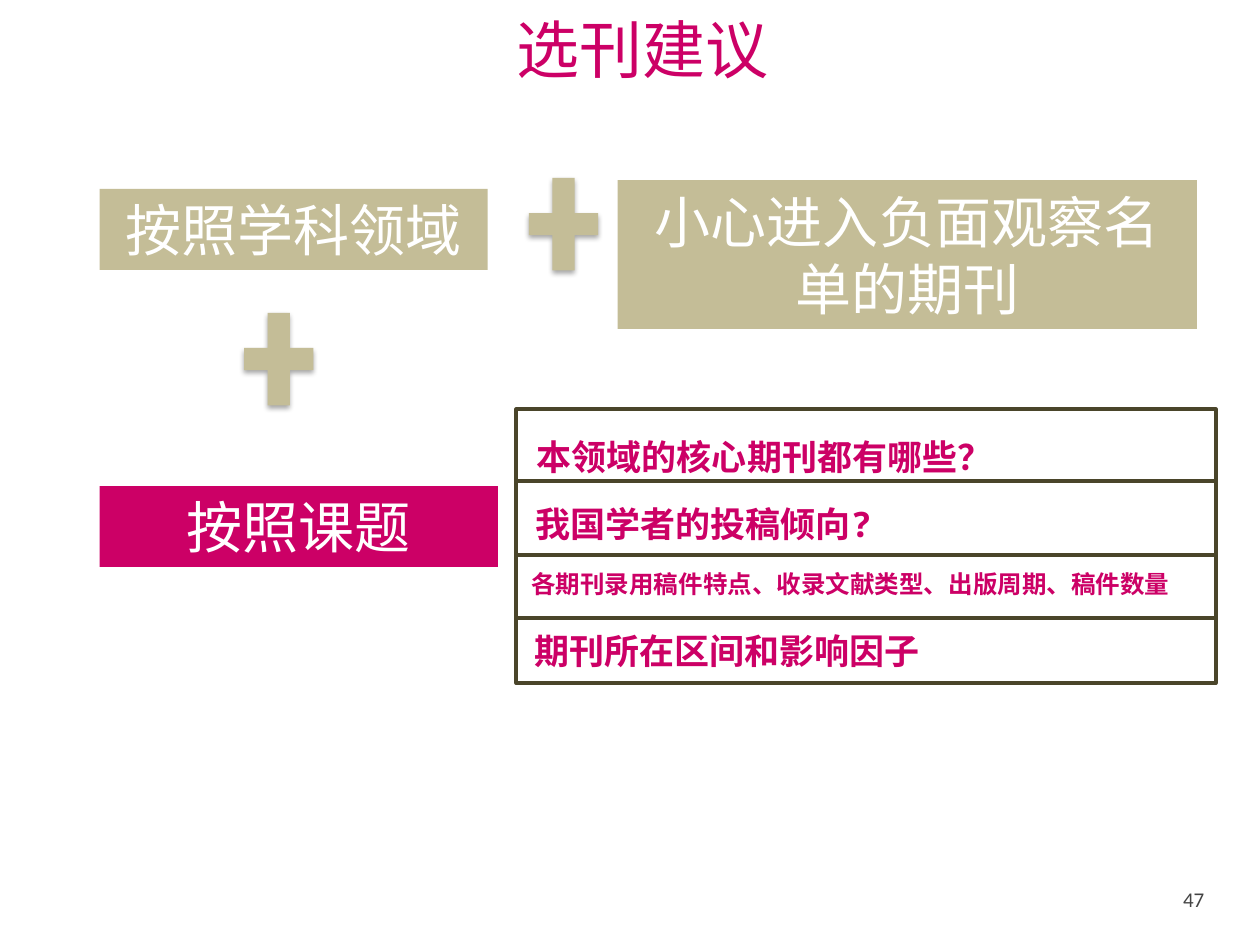
from lxml.etree import SubElement
from pptx import Presentation
from pptx.dml.color import RGBColor
from pptx.enum.shapes import MSO_CONNECTOR as CONN, MSO_SHAPE as SHAPE
from pptx.enum.text import MSO_ANCHOR as ANCHOR, PP_ALIGN as ALIGN
from pptx.oxml.ns import qn
from pptx.util import Cm, Pt

COLORS = {
    "tan": "C4BD97",
    "pink": "CC0066",
    "olive": "4A452A",
    "white": "FFFFFF",
    "gray": "444444",
    "black": "000000",
}


def rgb(name):
    """Return the named palette colour."""
    return RGBColor.from_string(COLORS[name])


def style(p, text, size, font, color, bold=False):
    """Write text into a paragraph and set its font."""
    p.text = text
    p.font.size = Pt(size)
    p.font.name = font
    p.font.bold = bold
    p.font.color.rgb = rgb(color)


def add_text(s, box, text, size, font, color, bold=False, wrap=False, inset=None):
    """Add a one-paragraph text box and return its frame."""
    tf = s.shapes.add_textbox(*map(Cm, box)).text_frame
    tf.word_wrap = wrap
    if inset is not None:
        tf.margin_left = tf.margin_right = Cm(inset[0])
        tf.margin_top = tf.margin_bottom = Cm(inset[1])
    style(tf.paragraphs[0], text, size, font, color, bold)
    return tf


def add_card(s, box, text, fill):
    """Add a filled rectangle with a large centred label."""
    sp = s.shapes.add_shape(SHAPE.RECTANGLE, *map(Cm, box))
    sp.shadow.inherit = False
    sp.fill.solid()
    sp.fill.fore_color.rgb = rgb(fill)
    sp.line.fill.background()
    tf = sp.text_frame
    tf.word_wrap = True
    p = tf.paragraphs[0]
    p.alignment = ALIGN.CENTER
    style(p, text, 32, "Arial", "white")


def add_plus(s, left, top):
    """Add a plus sign with a soft shadow below it."""
    sp = s.shapes.add_shape(SHAPE.MATH_PLUS, Cm(left), Cm(top), Cm(1.9), Cm(2.54))
    sp.fill.solid()
    sp.fill.fore_color.rgb = rgb("tan")
    sp.line.fill.background()
    sp.shadow.inherit = False
    effects = sp._element.spPr.find(qn("a:effectLst"))
    shadow = SubElement(effects, qn("a:outerShdw"), blurRad=str(Pt(3.1)),
                        dist=str(Pt(1.8)), dir="5400000", rotWithShape="0")
    color = SubElement(shadow, qn("a:srgbClr"), val=COLORS["black"])
    SubElement(color, qn("a:alpha"), val="35000")


def add_frame(s, box):
    """Add an unfilled outlined rectangle."""
    sp = s.shapes.add_shape(SHAPE.RECTANGLE, *map(Cm, box))
    sp.shadow.inherit = False
    sp.fill.background()
    sp.line.color.rgb = rgb("olive")
    sp.line.width = Pt(2.25)


def add_divider(s, left, right, y):
    """Add a horizontal line between two question rows."""
    line = s.shapes.add_connector(CONN.STRAIGHT, Cm(left), Cm(y), Cm(right), Cm(y))
    line.line.color.rgb = rgb("olive")
    line.line.width = Pt(2.25)
    SubElement(line._element.spPr, qn("a:effectLst"))


def add_title(s, text):
    """Add the slide title, anchored to the bottom of its box."""
    tf = add_text(s, (10.41, -0.56, 8.61, 2.31), text, 36, "Montserrat", "pink",
                  wrap=True, inset=(0, 0))
    tf.vertical_anchor = ANCHOR.BOTTOM
    tf.paragraphs[0].line_spacing = 0.9


def add_questions(s):
    """Add the framed list of questions about the topic."""
    rows = [
        ((10.57, 8.66, 9.55, 1.12), "本领域的核心期刊都有哪些？", 20),
        ((10.54, 10.01, 7.32, 1.12), "我国学者的投稿倾向?", 20),
        ((10.46, 11.35, 13.49, 0.86), "各期刊录用稿件特点、收录文献类型、出版周期、稿件数量", 14),
        ((10.52, 12.57, 8.36, 1.12), "期刊所在区间和影响因子", 20),
    ]
    for box, text, size in rows:
        add_text(s, box, text, size, "Noto Sans Mono", "pink", bold=True)
    for top, height in ((8.25, 4.2), (12.45, 1.32)):
        add_frame(s, (10.41, top, 14.1, height))
    for y in (9.7, 11.18):
        add_divider(s, 10.4, 24.49, y)


def main():
    """Build the slide and save it."""
    prs = Presentation()
    prs.slide_width, prs.slide_height = Cm(25.4), Cm(19.05)
    s = prs.slides.add_slide(prs.slide_layouts[6])
    add_text(s, (23.52, 17.7, 1.88, 1.35), "47", 12, "Calibri", "gray",
             wrap=True, inset=(0.33, 0.18))
    add_title(s, "选刊建议")
    add_card(s, (2.01, 3.81, 7.82, 1.63), "按照学科领域", "tan")
    add_card(s, (2.01, 9.8, 8.03, 1.63), "按照课题", "pink")
    add_card(s, (12.45, 3.63, 11.68, 3), "小心进入负面观察名单的期刊", "tan")
    add_plus(s, 4.67, 5.97)
    add_plus(s, 10.41, 3.25)
    add_questions(s)
    prs.save("out.pptx")


if __name__ == "__main__":
    main()
